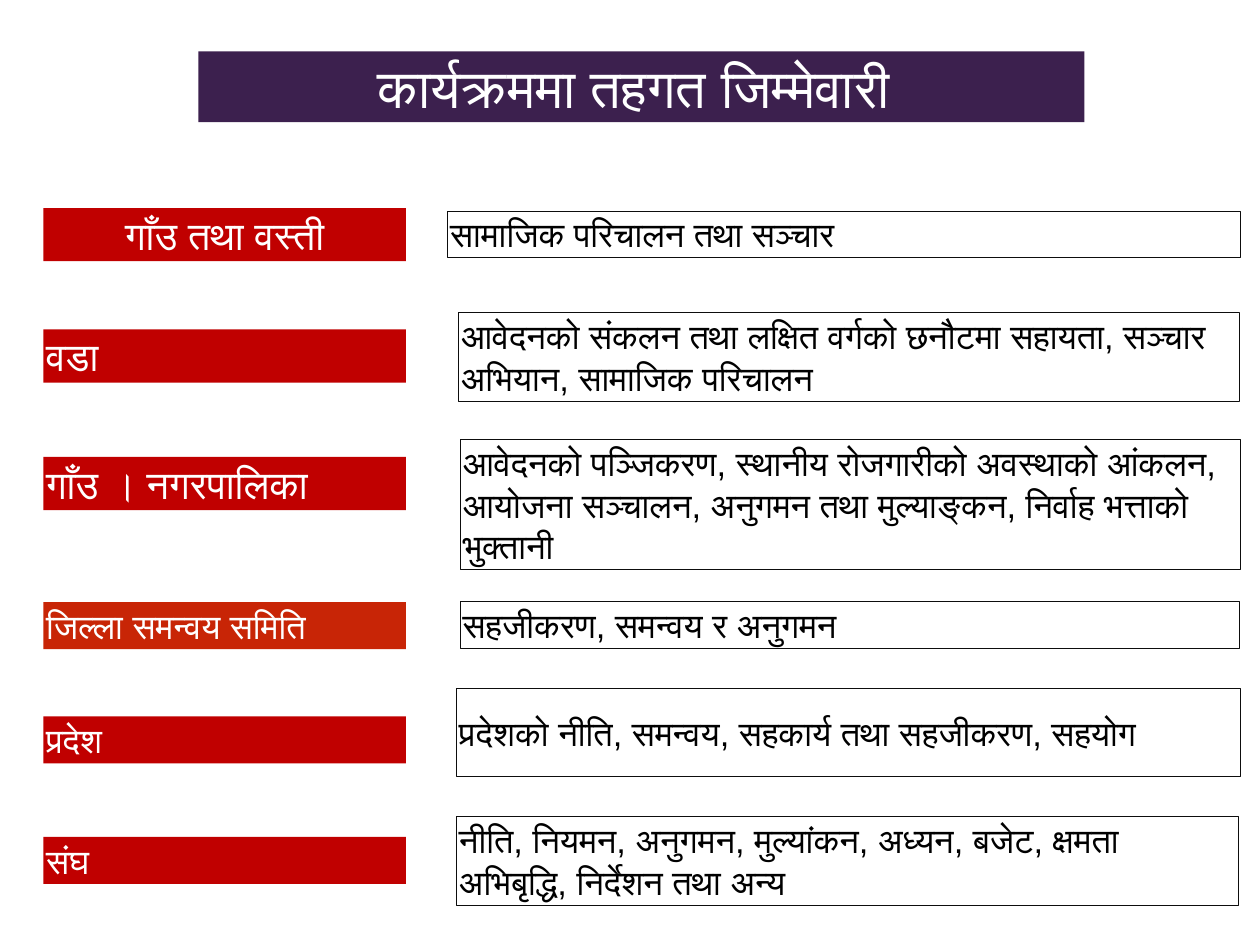
from pptx import Presentation
from pptx.dml.color import RGBColor
from pptx.enum.shapes import MSO_SHAPE
from pptx.enum.text import MSO_ANCHOR, PP_ALIGN
from pptx.oxml.ns import qn
from pptx.util import Inches, Pt
from lxml.etree import SubElement

FONT = "Arial"
COLORS = {"plum": "3C204E", "red": "C00000", "rust": "C82506",
          "white": "FFFFFF", "black": "000000", "edge": "0D0D0D"}

TITLE = "कार्यक्रममा तहगत जिम्मेवारी "

# Levels: label, top, size, fill, alignment
LEVELS = [
    ("गाँउ तथा वस्ती", 2.35, 32, "red", PP_ALIGN.CENTER),
    ("वडा", 3.72, 32, "red", PP_ALIGN.LEFT),
    ("गाँउ । नगरपालिका", 5.16, 32, "red", PP_ALIGN.LEFT),
    ("जिल्ला समन्वय समिति", 6.8, 28, "rust", PP_ALIGN.LEFT),
    ("प्रदेश", 8.09, 28, "red", PP_ALIGN.LEFT),
    ("संघ", 9.45, 28, "red", PP_ALIGN.LEFT),
]

# Duties, one per level: text, left, top, right, height in lines
DUTIES = [
    ("सामाजिक परिचालन तथा सञ्चार", 5.05, 2.38, 14, 1),
    ("आवेदनको संकलन तथा लक्षित वर्गको छनौटमा सहायता, सञ्चार अभियान, सामाजिक परिचालन",
     5.17, 3.53, 13.98, 2),
    ("आवेदनको पञ्जिकरण, स्थानीय रोजगारीको अवस्थाको आंकलन, आयोजना सञ्चालन, "
     "अनुगमन तथा मुल्याङ्कन, निर्वाह भत्ताको भुक्तानी", 5.19, 4.96, 14, 3),
    ("सहजीकरण, समन्वय र अनुगमन", 5.19, 6.79, 13.98, 1),
    ("प्रदेशको नीति, समन्वय, सहकार्य तथा सहजीकरण, सहयोग", 5.15, 7.77, 14, 2),
    ("नीति, नियमन, अनुगमन, मुल्यांकन, अध्यन, बजेट, क्षमता अभिबृद्धि, निर्देशन तथा अन्य",
     5.15, 9.22, 13.98, 2),
]

LABEL_LEFT, LABEL_WIDTH = 0.49, 4.09
LABEL_HEIGHT = {32: 0.6, 28: 0.53}
LINE, PAD = 0.47, 0.03


def add_box(slide, text, left, top, width, height, size=28, fill=None,
            edge=None, color="white", align=PP_ALIGN.LEFT):
    box = slide.shapes.add_shape(MSO_SHAPE.RECTANGLE, Inches(left), Inches(top),
                                 Inches(width), Inches(height))
    box.shadow.inherit = False
    if fill:
        box.fill.solid()
        box.fill.fore_color.rgb = RGBColor.from_string(COLORS[fill])
    else:
        box.fill.background()
    if edge:
        box.line.color.rgb = RGBColor.from_string(COLORS[edge])
        box.line.width = Pt(0.25)
    else:
        box.line.fill.background()

    frame = box.text_frame
    frame.word_wrap = True
    frame.vertical_anchor = MSO_ANCHOR.MIDDLE
    frame.margin_left = frame.margin_right = Inches(PAD)
    frame.margin_top = frame.margin_bottom = Inches(PAD)
    para = frame.paragraphs[0]
    para.alignment = align
    run = para.add_run()
    run.text = text
    run.font.size = Pt(size)
    run.font.color.rgb = RGBColor.from_string(COLORS[color])
    run.font.name = FONT
    # Devanagari takes the complex-script font
    SubElement(run.font._element, qn("a:cs")).set("typeface", FONT)


def main():
    deck = Presentation()
    deck.slide_width, deck.slide_height = Inches(14.22), Inches(10.67)
    slide = deck.slides.add_slide(deck.slide_layouts[6])

    # Title bar
    add_box(slide, TITLE, 2.24, 0.58, 10, 0.8, size=44, fill="plum",
            align=PP_ALIGN.CENTER)

    # Level labels
    for text, top, size, fill, align in LEVELS:
        add_box(slide, text, LABEL_LEFT, top, LABEL_WIDTH, LABEL_HEIGHT[size],
                size=size, fill=fill, align=align)

    # Duty boxes
    for text, left, top, right, lines in DUTIES:
        add_box(slide, text, left, top, right - left, lines * LINE + 2 * PAD,
                edge="edge", color="black")

    deck.save("out.pptx")


if __name__ == "__main__":
    main()
